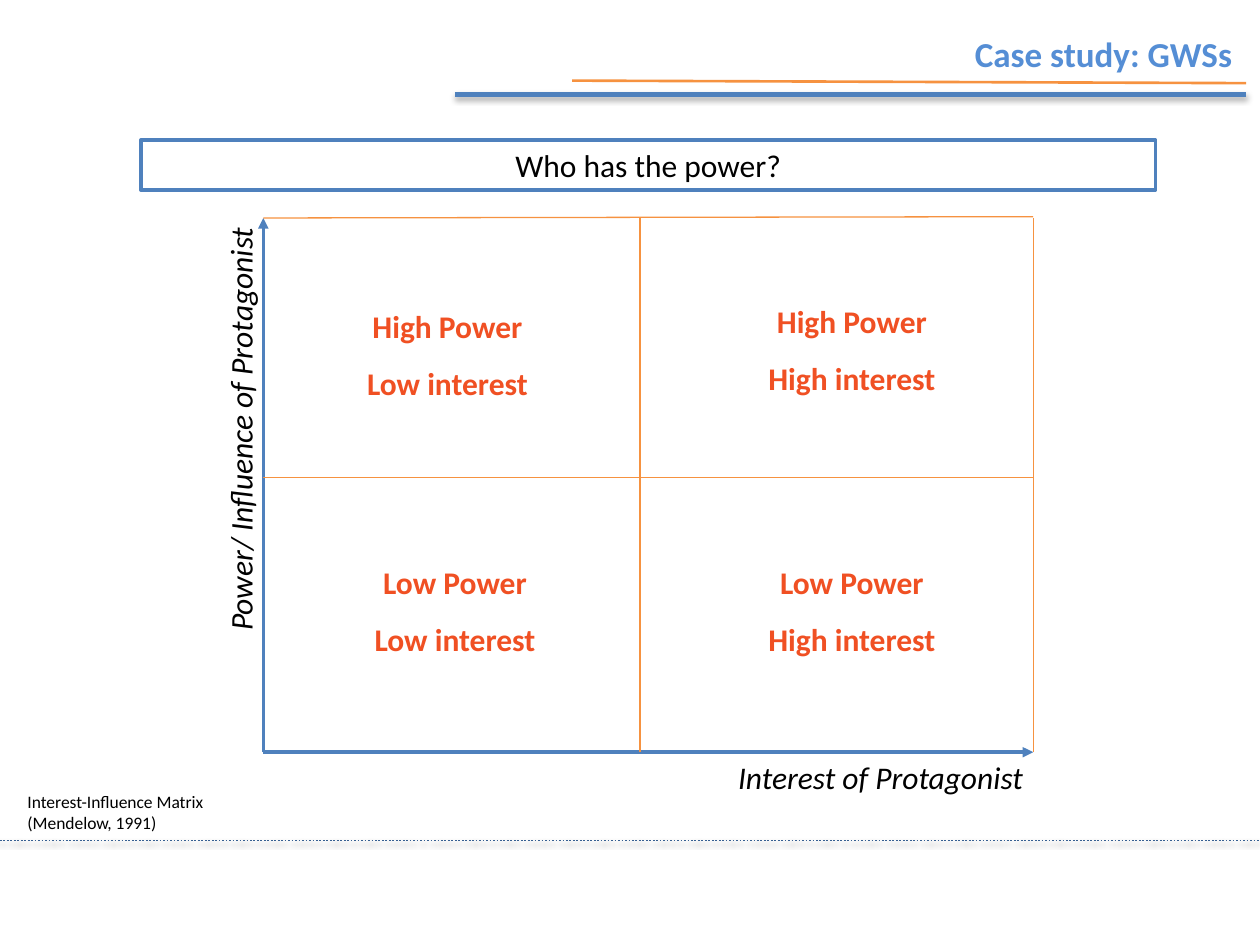
import pptx
import pptx.util
from dataclasses import dataclass
from lxml import etree
from pptx.dml.color import RGBColor
from pptx.enum.dml import MSO_LINE
from pptx.enum.shapes import MSO_CONNECTOR, MSO_SHAPE
from pptx.enum.text import MSO_ANCHOR, MSO_AUTO_SIZE, PP_ALIGN
from pptx.oxml.ns import qn
from pptx.util import Inches


@dataclass(frozen=True)
class Theme:
    font: str = "Calibri"
    title: str = "558ED5"
    blue: str = "4F81BD"
    navy: str = "376092"
    orange: str = "F69240"
    accent: str = "F05023"
    text: str = "000000"
    paper: str = "FFFFFF"
    title_size: int = 20
    body_size: int = 18
    note_size: int = 10


THEME = Theme()

# Edges of the matrix, in inches
LEFT, MIDDLE_X, RIGHT = 2.09, 5.08, 8.2
TOP, MIDDLE_Y, BOTTOM = 1.73, 3.79, 5.97


def add_shadow(effects):
    shadow = etree.SubElement(effects, qn("a:outerShdw"), blurRad="40000",
                              dist="23000", dir="5400000", rotWithShape="0")
    color = etree.SubElement(shadow, qn("a:srgbClr"), val="000000")
    etree.SubElement(color, qn("a:alpha"), val="35000")


def add_line(slide, start, end, color, width, arrow=False, shadow=False, dash=None):
    line = slide.shapes.add_connector(
        MSO_CONNECTOR.STRAIGHT, *(Inches(value) for value in (*start, *end)))
    line.line.color.rgb = RGBColor.from_string(color)
    line.line.width = pptx.util.Pt(width)
    if dash:
        line.line.dash_style = dash
    if arrow:
        etree.SubElement(line.line._get_or_add_ln(), qn("a:tailEnd"), type="triangle")
    effects = etree.SubElement(line._element.spPr, qn("a:effectLst"))
    if shadow:
        add_shadow(effects)


def write_text(shape, lines, size, color=THEME.text, align=PP_ALIGN.LEFT,
               bold=False, italic=False, spacing=None):
    frame = shape.text_frame
    frame.text = "\n".join(lines)
    frame.word_wrap = True
    for paragraph in frame.paragraphs:
        paragraph.alignment = align
        if spacing:
            paragraph.line_spacing = spacing
        font = paragraph.font
        font.name, font.size = THEME.font, pptx.util.Pt(size)
        font.bold, font.italic = bold, italic
        font.color.rgb = RGBColor.from_string(color)


def add_text(slide, box, lines, size, rotation=0, **style):
    shape = slide.shapes.add_textbox(*(Inches(value) for value in box))
    shape.rotation = rotation
    write_text(shape, lines, size, **style)


def add_title(slide, text):
    title = slide.shapes.title
    title.left, title.top = Inches(7.62), Inches(0.21)
    title.width, title.height = Inches(2.26), Inches(0.44)
    write_text(title, [text], THEME.title_size, THEME.title, PP_ALIGN.RIGHT, bold=True)
    title.text_frame.word_wrap = False
    title.text_frame.auto_size = MSO_AUTO_SIZE.NONE
    title.text_frame.vertical_anchor = MSO_ANCHOR.TOP


def add_question(slide, text):
    banner = slide.shapes.add_shape(MSO_SHAPE.RECTANGLE, Inches(1.12), Inches(1.11),
                                    Inches(8.05), Inches(0.4))
    banner.shadow.inherit = False
    banner.fill.solid()
    banner.fill.fore_color.rgb = RGBColor.from_string(THEME.paper)
    banner.line.color.rgb = RGBColor.from_string(THEME.blue)
    banner.line.width = pptx.util.Pt(2)
    write_text(banner, [text], THEME.body_size, align=PP_ALIGN.CENTER)


def add_matrix(slide):
    # Axes
    for end in ((RIGHT, BOTTOM), (LEFT, TOP)):
        add_line(slide, (LEFT, BOTTOM), end, THEME.blue, 2, arrow=True)
    # Grid
    for start, end in (
        ((LEFT, MIDDLE_Y), (RIGHT, MIDDLE_Y)),
        ((MIDDLE_X, TOP), (MIDDLE_X, BOTTOM)),
        ((LEFT, TOP), (RIGHT, 1.72)),
        ((RIGHT, TOP), (RIGHT, BOTTOM)),
    ):
        add_line(slide, start, end, THEME.orange, 0.75)
    # Axis labels
    add_text(slide, (5.76, BOTTOM, 2.9, 0.38), ["Interest of Protagonist"],
             THEME.body_size, italic=True)
    add_text(slide, (0.1, 3.12, 3.59, 0.38), ["Power/ Influence of Protagonist"],
             THEME.body_size, rotation=270, italic=True)
    # Quadrants
    for left, top, power, interest in (
        (2.55, 2.24, "High", "Low"),
        (2.61, 4.27, "Low", "Low"),
        (5.76, 2.2, "High", "High"),
        (5.76, 4.27, "Low", "High"),
    ):
        add_text(slide, (left, top, 2.06, 0.9),
                 [f"{power} Power ", f"{interest} interest "], THEME.body_size,
                 color=THEME.accent, align=PP_ALIGN.CENTER, bold=True, spacing=1.5)


def main():
    presentation = pptx.Presentation()
    presentation.slide_width, presentation.slide_height = Inches(10), Inches(7.5)
    slide = presentation.slides.add_slide(presentation.slide_layouts[5])

    # Footer and header rules
    add_line(slide, (0, 6.67), (10, 6.67), THEME.navy, 1, shadow=True,
             dash=MSO_LINE.ROUND_DOT)
    add_line(slide, (3.61, 0.75), (9.89, 0.75), THEME.blue, 3, shadow=True)
    add_line(slide, (4.54, 0.64), (9.89, 0.66), THEME.orange, 1.5)

    # Heading, question and source
    add_title(slide, "Case study: GWSs")
    add_question(slide, "Who has the power?")
    add_text(slide, (0.12, 6.23, 2, 0.44),
             ["Interest-Influence Matrix (Mendelow, 1991)"], THEME.note_size)

    add_matrix(slide)
    presentation.save("out.pptx")


if __name__ == "__main__":
    main()
